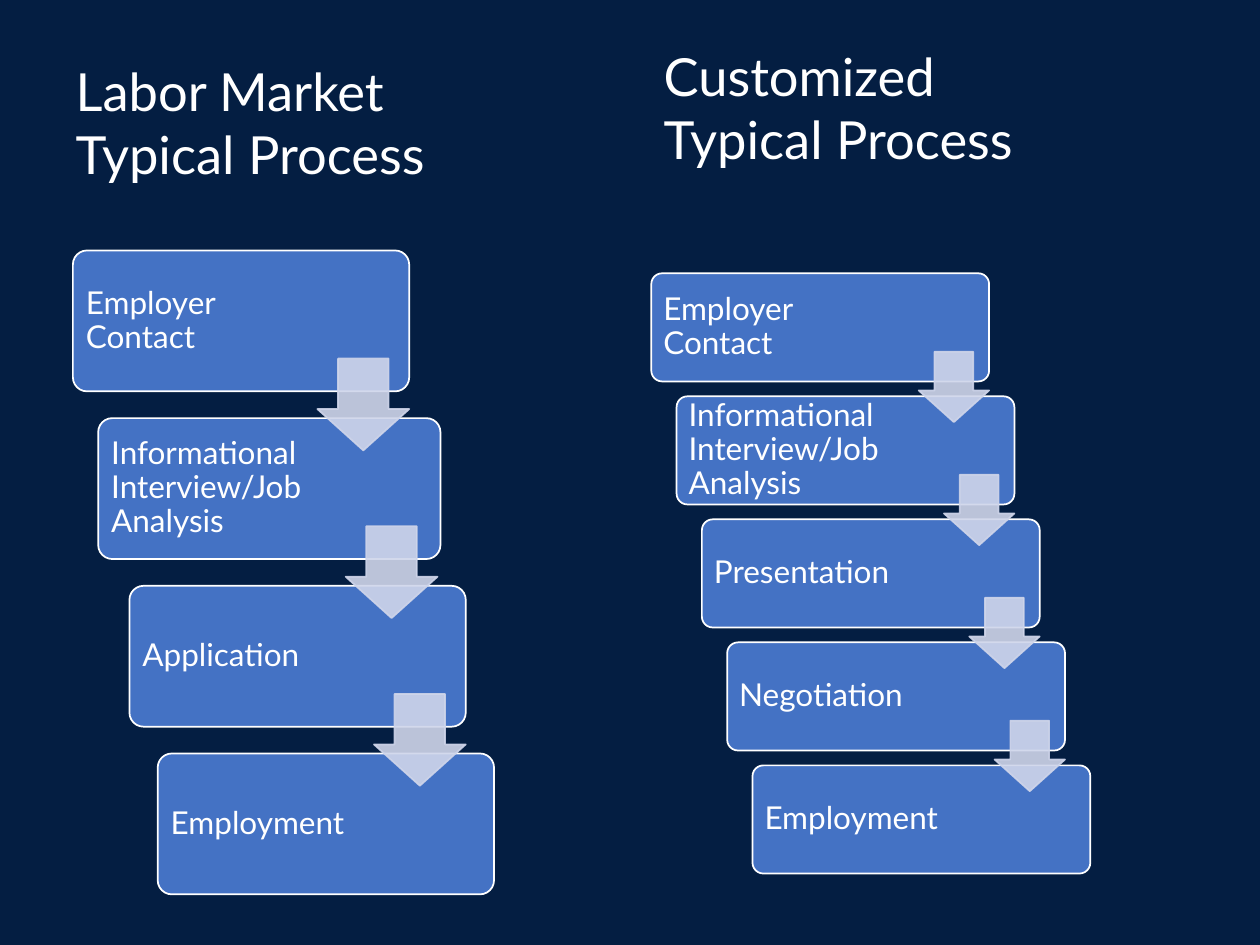
from dataclasses import dataclass
from typing import NamedTuple

from lxml.etree import SubElement
from pptx import Presentation
from pptx.dml.color import RGBColor
from pptx.enum.shapes import MSO_SHAPE as Preset
from pptx.enum.text import MSO_ANCHOR as Anchor, MSO_AUTO_SIZE as AutoSize, PP_ALIGN as Align
from pptx.oxml.ns import qn
from pptx.util import Cm, Pt


@dataclass(frozen=True)
class Theme:
    background: RGBColor = RGBColor(0x04, 0x1E, 0x42)
    box: RGBColor = RGBColor(0x44, 0x72, 0xC4)
    arrow: RGBColor = RGBColor(0xCF, 0xD5, 0xEA)
    text: RGBColor = RGBColor(0xFF, 0xFF, 0xFF)
    font: str = "Lato"
    heading_size: int = 30
    step_size: int = 18
    arrow_opacity: int = 90


class Step(NamedTuple):
    label: str
    outset: float = 0  # extra width on each side


@dataclass(frozen=True)
class Staircase:
    """Descending boxes joined by arrows; all lengths in centimetres."""
    left: float
    top: float
    width: float
    height: float
    shift: float
    pitch: float
    arrow_size: float
    arrow_drop: float
    steps: tuple[Step, ...]


THEME = Theme()

LABOR_MARKET = Staircase(
    left=1.47, top=5.05, width=6.78, height=2.84, shift=0.57, pitch=3.38,
    arrow_size=1.85, arrow_drop=2.18,
    steps=(
        Step("Employer Contact"),
        Step("Informational Interview/Job Analysis", outset=0.06),
        Step("Application"),
        Step("Employment"),
    ),
)

CUSTOMIZED = Staircase(
    left=13.13, top=5.51, width=6.81, height=2.18, shift=0.51, pitch=2.48,
    arrow_size=1.42, arrow_drop=1.58,
    steps=(
        Step("Employer Contact"),
        Step("Informational Interview/Job Analysis"),
        Step("Presentation"),
        Step("Negotiation"),
        Step("Employment"),
    ),
)


def style_paragraph(paragraph, size: int) -> None:
    paragraph.alignment = Align.LEFT
    paragraph.font.name = THEME.font
    paragraph.font.size = Pt(size)
    paragraph.font.color.rgb = THEME.text


def fill_heading(shape, text: str, left: float, top: float, width: float) -> None:
    shape.left, shape.top = Cm(left), Cm(top)
    shape.width, shape.height = Cm(width), Cm(2.82)
    frame = shape.text_frame
    frame.text = text
    frame.word_wrap = True
    frame.auto_size = AutoSize.NONE
    frame.vertical_anchor = Anchor.TOP
    for paragraph in frame.paragraphs:
        style_paragraph(paragraph, THEME.heading_size)


def paint(shape, fill: RGBColor, line: RGBColor) -> None:
    shape.shadow.inherit = False
    shape.fill.solid()
    shape.fill.fore_color.rgb = fill
    shape.line.color.rgb = line
    shape.line.width = Pt(1)


def add_box(shapes, step: Step, left: float, top: float, width: float, height: float) -> None:
    box = shapes.add_shape(Preset.ROUNDED_RECTANGLE, Cm(left - step.outset), Cm(top),
                           Cm(width + 2 * step.outset), Cm(height))
    box.adjustments[0] = 0.1
    paint(box, THEME.box, THEME.text)
    frame = box.text_frame
    frame.text = step.label
    frame.word_wrap = True
    frame.vertical_anchor = Anchor.MIDDLE
    frame.margin_left = frame.margin_top = frame.margin_bottom = Cm(0.18)
    frame.margin_right = Cm(2.3)  # keeps the label clear of the arrow
    paragraph = frame.paragraphs[0]
    paragraph.line_spacing = 0.9
    style_paragraph(paragraph, THEME.step_size)


def add_arrow(shapes, left: float, top: float, size: float) -> None:
    arrow = shapes.add_shape(Preset.DOWN_ARROW, Cm(left), Cm(top), Cm(size), Cm(size))
    arrow.adjustments[0] = 0.55
    arrow.adjustments[1] = 0.45
    paint(arrow, THEME.arrow, THEME.arrow)
    # Transparency of both fill and outline
    for color in arrow.fill._xPr.iter(qn("a:srgbClr")):
        SubElement(color, qn("a:alpha"), val=str(THEME.arrow_opacity * 1000))


def add_staircase(slide, stairs: Staircase) -> None:
    shapes = slide.shapes.add_group_shape().shapes
    corners = [(stairs.left + index * stairs.shift, stairs.top + index * stairs.pitch)
               for index in range(len(stairs.steps))]
    for step, (left, top) in zip(stairs.steps, corners):
        add_box(shapes, step, left, top, stairs.width, stairs.height)
    # Arrows lie over the boxes, flush with the right edge of the upper one
    for left, top in corners[:-1]:
        add_arrow(shapes, left + stairs.width - stairs.arrow_size,
                  top + stairs.arrow_drop, stairs.arrow_size)


def main() -> None:
    presentation = Presentation()
    presentation.slide_width, presentation.slide_height = Cm(25.4), Cm(19.05)
    slide = presentation.slides.add_slide(presentation.slide_layouts.get_by_name("Title Only"))
    slide.background.fill.solid()
    slide.background.fill.fore_color.rgb = THEME.background

    # Left column
    fill_heading(slide.shapes.title, "Labor Market Typical Process", 1.27, 1.07, 8.05)
    add_staircase(slide, LABOR_MARKET)

    # Right column
    right_heading = slide.shapes.add_textbox(0, 0, 0, 0)
    fill_heading(right_heading, "Customized\nTypical Process", 13.13, 0.76, 10.34)
    add_staircase(slide, CUSTOMIZED)

    presentation.save("out.pptx")


if __name__ == "__main__":
    main()
